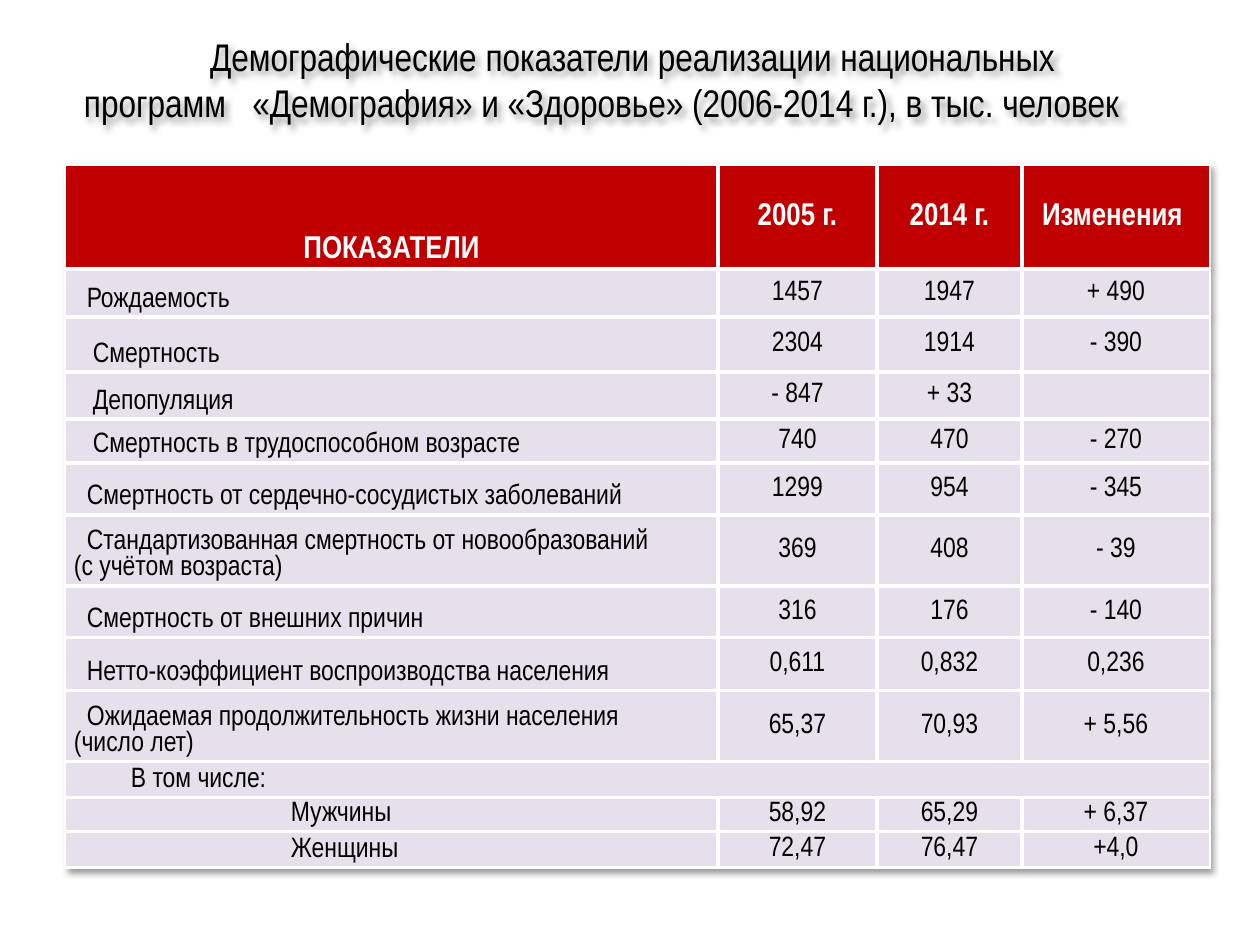
from dataclasses import dataclass

import pptx
import pptx.dml.color
import pptx.enum.text
import pptx.oxml
import pptx.oxml.ns
import pptx.util

RGBColor = pptx.dml.color.RGBColor
Align = pptx.enum.text.PP_ALIGN
Anchor = pptx.enum.text.MSO_ANCHOR

WHITE = RGBColor(0xFF, 0xFF, 0xFF)
BLACK = RGBColor(0x00, 0x00, 0x00)
RED = RGBColor(0xC0, 0x00, 0x00)
LILAC = RGBColor(0xE6, 0xE0, 0xEC)

FONT = "Arial Narrow"
PX_PER_INCH = 126
THIN, THICK = 1, 2.25
COLUMN_WIDTHS = (653, 159, 145, 188)
HEADINGS = ("ПОКАЗАТЕЛИ", "2005 г.", "2014 г.", "Изменения ")
HEADER_HEIGHT = 104
LABEL_BOTTOM = 4


@dataclass
class Indicator:
    label: str
    height: int
    indent: int
    values: tuple = ()


INDICATORS = (
    Indicator("Рождаемость", 48, 13, ("1457", "1947", "+ 490")),
    Indicator("Смертность", 55, 19, ("2304", "1914", "- 390")),
    Indicator("Депопуляция", 47, 19, ("- 847", "+ 33", "")),
    Indicator("Смертность в трудоспособном возрасте", 44, 19, ("740", "470", "- 270")),
    Indicator("Смертность от сердечно-сосудистых заболеваний", 52, 13, ("1299", "954", "- 345")),
    Indicator("Стандартизованная смертность от новообразований\v(с учётом возраста)", 71, 13,
              ("369", "408", "- 39")),
    Indicator("Смертность от внешних причин", 52, 13, ("316", "176", "- 140")),
    Indicator("Нетто-коэффициент воспроизводства населения", 53, 13, ("0,611", "0,832", "0,236")),
    Indicator("Ожидаемая продолжительность жизни населения\v(число лет)", 71, 13,
              ("65,37", "70,93", "+ 5,56")),
    Indicator("В том числе:", 36, 57),
    Indicator("Мужчины", 34, 217, ("58,92", "65,29", "+ 6,37")),
    Indicator("Женщины", 36, 217, ("72,47", "76,47", "+4,0")),
)


def px(length: int) -> int:
    return round(length * 914400 / PX_PER_INCH)


def apply(target, **values) -> None:
    for name, value in values.items():
        setattr(target, name, value)


def set_font(span, size: int, color: RGBColor, bold: bool = False) -> None:
    apply(span.font, name=FONT, size=pptx.util.Pt(size), bold=bold)
    span.font.color.rgb = color


def set_indent(para, indent: int) -> None:
    properties = para._p.get_or_add_pPr()
    properties.set("marL", "0")
    properties.set("indent", str(px(indent)))


def shadow_effect():
    return pptx.oxml.parse_xml(
        f'<a:effectLst {pptx.oxml.ns.nsdecls("a")}>'
        '<a:outerShdw blurRad="50800" dist="38100" dir="2700000" algn="tl" rotWithShape="0">'
        '<a:srgbClr val="000000"><a:alpha val="40000"/></a:srgbClr>'
        '</a:outerShdw></a:effectLst>'
    )


def draw_title(page) -> None:
    box = page.shapes.title
    apply(box, left=px(64), top=px(27), width=px(1075), height=px(106))
    box._element.spPr.append(shadow_effect())
    apply(box.text_frame, word_wrap=True, vertical_anchor=Anchor.TOP,
          auto_size=pptx.enum.text.MSO_AUTO_SIZE.NONE)
    para = box.text_frame.paragraphs[0]
    para.alignment = Align.CENTER
    set_indent(para, 62)
    parts = (
        ("Демографические показатели реализации национальных программ", 0),
        (" ", 1000),
        ("«Демография» и «Здоровье» (2006-2014 г.), в тыс. человек", 0),
    )
    for text, spacing in parts:
        span = para.add_run()
        span.text = text
        set_font(span, 22, BLACK)
        if spacing:
            span._r.get_or_add_rPr().set("spc", str(spacing))


def set_borders(cell, widths: dict) -> None:
    properties = cell._tc.get_or_add_tcPr()
    for side, width in widths.items():
        properties.append(pptx.oxml.parse_xml(
            f'<a:ln{side} {pptx.oxml.ns.nsdecls("a")} w="{pptx.util.Pt(width)}">'
            f'<a:solidFill><a:srgbClr val="{WHITE}"/></a:solidFill></a:ln{side}>'
        ))


def format_cell(cell, row: int, column: int, last: bool) -> None:
    apply(cell, margin_left=px(9), margin_right=px(9), margin_top=0,
          margin_bottom=0 if column else px(LABEL_BOTTOM),
          vertical_anchor=Anchor.MIDDLE if column else Anchor.BOTTOM)
    set_borders(cell, {
        "L": THICK if column else THIN,
        "R": THIN if last else THICK,
        "T": THICK if row else THIN,
        "B": THICK,
    })
    cell.fill.solid()
    cell.fill.fore_color.rgb = LILAC if row else RED


def write_cell(cell, text: str, row: int, column: int, indent: int) -> None:
    cell.text = text
    para = cell.text_frame.paragraphs[0]
    para.alignment = Align.CENTER if column or not row else Align.LEFT
    if row:
        apply(para, space_before=pptx.util.Pt(6), space_after=pptx.util.Pt(6))
    elif column < len(COLUMN_WIDTHS) - 1:
        para.space_after = pptx.util.Pt(6)
    if indent:
        set_indent(para, indent)
    for span in para.runs:
        set_font(span, 16 if row else 18, BLACK if row else WHITE, not row)


def draw_table(page) -> None:
    rows = (Indicator(HEADINGS[0], HEADER_HEIGHT, 0, HEADINGS[1:]), *INDICATORS)
    frame = page.shapes.add_table(
        len(rows), len(COLUMN_WIDTHS), px(65), px(165),
        px(sum(COLUMN_WIDTHS)), px(sum(item.height for item in rows)),
    )
    table = frame.table
    table.horz_banding = False
    table._tbl.tblPr.insert(0, shadow_effect())
    for column, width in zip(table.columns, COLUMN_WIDTHS):
        column.width = px(width)
    for row, item in enumerate(rows):
        table.rows[row].height = px(item.height)
        texts = (item.label, *item.values)
        if not item.values:
            table.cell(row, 0).merge(table.cell(row, len(COLUMN_WIDTHS) - 1))
        for column, text in enumerate(texts):
            cell = table.cell(row, column)
            format_cell(cell, row, column, column == len(texts) - 1)
            write_cell(cell, text, row, column, 0 if column else item.indent)


def main() -> None:
    deck = pptx.Presentation()
    apply(deck, slide_width=px(1260), slide_height=px(945))
    page = deck.slides.add_slide(deck.slide_layouts[5])
    draw_title(page)
    draw_table(page)
    deck.save("out.pptx")


if __name__ == "__main__":
    main()
